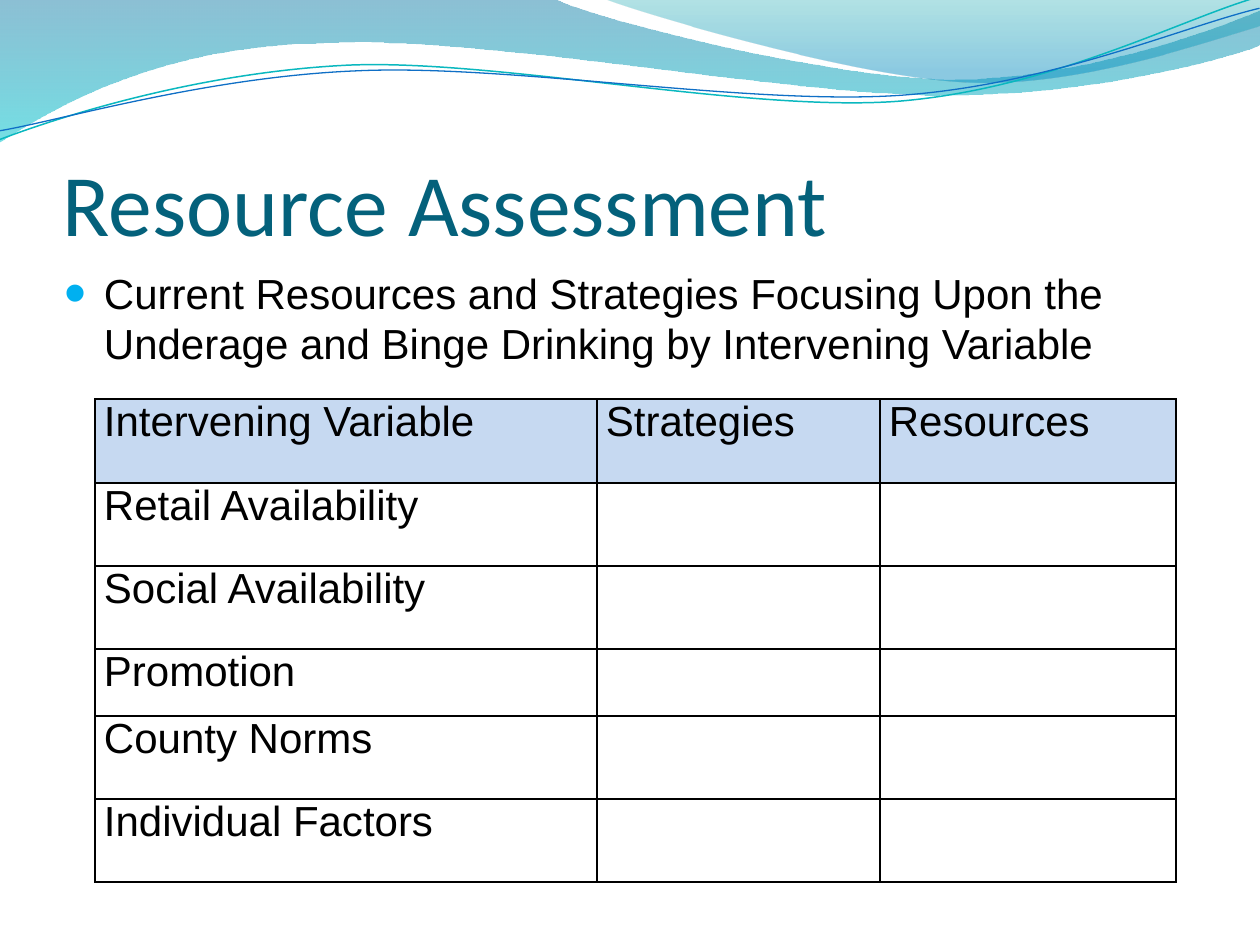
from dataclasses import dataclass

from lxml import etree
from pptx import Presentation
from pptx.dml.color import RGBColor
from pptx.enum.text import MSO_ANCHOR
from pptx.oxml.ns import qn
from pptx.util import Pt

SCALE = 914400 / 126
MIDDLE, BOTTOM = MSO_ANCHOR.MIDDLE, MSO_ANCHOR.BOTTOM

COLORS = {
    "title": "04617B", "text": "000000", "bullet": "00B0F0", "header": "C6D9F1",
    "border": "000000", "deep_blue": "0074A1", "cyan": "00C6CF", "teal": "00A1A9",
    "sky": "008BBF", "teal_line": "0AB8BF", "blue_line": "0F6FC6",
}

Point = tuple[int, int]


@dataclass
class Stop:
    position: float
    color: str
    opacity: int


@dataclass
class Wave:
    """Each segment holds one end point, or two controls and an end point."""
    start: Point
    segments: list[tuple[Point, ...]]
    stops: tuple[Stop, ...] = ()
    line: str = ""
    line_width: float = 0
    rotation: float = 0


@dataclass
class TextBlock:
    text: str
    box: tuple[int, int, int, int]
    insets: tuple[int, int, int, int]
    anchor: MSO_ANCHOR
    font: str
    size: int
    color: str


WAVES = [
    Wave((0, 0), [
        ((554, -1),),
        ((600, 21), (837, 79), (955, 79)),
        ((1075, 79), (1207, 33), (1260, 11)),
        ((1261, 45),),
        ((1239, 55), (1096, 96), (940, 95)),
        ((784, 95), (481, 35), (324, 43)),
        ((163, 45), (58, 105), (-1, 142)),
    ], stops=(Stop(0, "deep_blue", 45), Stop(1, "cyan", 55))),
    Wave((604, -1), [
        ((641, 14), (859, 78), (969, 82)),
        ((1079, 87), (1211, 40), (1260, 26)),
        ((1260, 0),),
    ], stops=(Stop(0, "teal", 30), Stop(0.8, "sky", 45))),
    Wave((-3, 110), [
        ((58, 90), (199, 52), (350, 52)),
        ((499, 53), (745, 118), (896, 114)),
        ((1049, 109), (1184, 45), (1260, 27)),
    ], line="teal_line", line_width=0.85, rotation=357.3),
    Wave((-2, 101), [
        ((57, 94), (207, 57), (357, 58)),
        ((509, 58), (750, 112), (902, 108)),
        ((1052, 104), (1187, 52), (1262, 38)),
    ], line="blue_line", line_width=0.75, rotation=357.3),
]

TITLE = TextBlock("Resource Assessment", (63, 97, 1134, 157), (0, 6, 0, 0),
                  BOTTOM, "Calibri", 50, "title")
SUBTITLE = TextBlock(
    "Current Resources and Strategies Focusing Upon the Underage and Binge Drinking "
    "by Intervening Variable",
    (53, 260, 1071, 115), (12, 6, 12, 6), MIDDLE, "Arial", 24, "text")
BULLET_INDENT = 39

HEADERS = ["Intervening Variable", "Strategies", "Resources"]
VARIABLES = ["Retail Availability", "Social Availability", "Promotion",
             "County Norms", "Individual Factors"]
TABLE_LEFT, TABLE_TOP = 95, 399
COLUMN_WIDTHS = [502, 283, 296]
ROW_HEIGHTS = [84, 83, 83, 67, 83, 83]


def px(value: int) -> int:
    return round(value * SCALE)


def rgb(name: str) -> RGBColor:
    return RGBColor.from_string(COLORS[name])


def bend_segments(shape, segments: list[tuple[Point, ...]]) -> None:
    """Join the line steps of each three-point segment into one cubic curve."""
    steps = iter(list(shape.element.iter(qn("a:lnTo"))))
    for segment in segments:
        segment_steps = [next(steps) for _ in segment]
        if len(segment) == 3:
            curve = etree.Element(qn("a:cubicBezTo"))
            segment_steps[0].addprevious(curve)
            for step in segment_steps:
                curve.append(step[0])
                step.getparent().remove(step)


def draw_wave(slide, wave: Wave) -> None:
    builder = slide.shapes.build_freeform(*wave.start, scale=SCALE)
    points = [point for segment in wave.segments for point in segment]
    builder.add_line_segments(points, close=bool(wave.stops))
    shape = builder.convert_to_shape()
    bend_segments(shape, wave.segments)
    shape.rotation = wave.rotation
    shape.shadow.inherit = False
    if not wave.stops:
        shape.fill.background()
        shape.line.color.rgb = rgb(wave.line)
        shape.line.width = Pt(wave.line_width)
        return
    shape.line.fill.background()
    shape.fill.gradient()
    shape.fill.gradient_angle = 270
    for target, stop in zip(shape.fill.gradient_stops, wave.stops):
        target.position = stop.position
        target.color.rgb = rgb(stop.color)
    colors = shape.element.spPr.find(qn("a:gradFill")).iter(qn("a:srgbClr"))
    for color, stop in zip(colors, wave.stops):
        etree.SubElement(color, qn("a:alpha"), val=str(stop.opacity * 1000))


def style_font(paragraph, name: str, size: int, color: str) -> None:
    paragraph.font.name = name
    paragraph.font.size = Pt(size)
    paragraph.font.color.rgb = rgb(color)


def draw_text(slide, block: TextBlock):
    frame = slide.shapes.add_textbox(*map(px, block.box)).text_frame
    frame.word_wrap = True
    frame.vertical_anchor = block.anchor
    (frame.margin_left, frame.margin_top,
     frame.margin_right, frame.margin_bottom) = map(px, block.insets)
    paragraph = frame.paragraphs[0]
    paragraph.text = block.text
    style_font(paragraph, block.font, block.size, block.color)
    return paragraph


def add_bullet(paragraph) -> None:
    properties = paragraph._p.get_or_add_pPr()
    properties.set("marL", str(px(BULLET_INDENT)))
    properties.set("indent", str(-px(BULLET_INDENT)))
    color = etree.Element(qn("a:buClr"))
    etree.SubElement(color, qn("a:srgbClr"), val=COLORS["bullet"])
    size = etree.Element(qn("a:buSzPct"), val="150000")
    font = etree.Element(qn("a:buFont"), typeface="Arial")
    character = etree.Element(qn("a:buChar"), char="•")
    for position, element in enumerate((color, size, font, character)):
        properties.insert(position, element)


def add_borders(cell) -> None:
    properties = cell._tc.get_or_add_tcPr()
    for position, side in enumerate(("lnL", "lnR", "lnT", "lnB")):
        line = etree.Element(qn(f"a:{side}"), w=str(Pt(1)))
        fill = etree.SubElement(line, qn("a:solidFill"))
        etree.SubElement(fill, qn("a:srgbClr"), val=COLORS["border"])
        properties.insert(position, line)


def draw_table(slide) -> None:
    rows = [HEADERS] + [[variable, "", ""] for variable in VARIABLES]
    table = slide.shapes.add_table(
        len(rows), len(HEADERS), px(TABLE_LEFT), px(TABLE_TOP),
        px(sum(COLUMN_WIDTHS)), px(sum(ROW_HEIGHTS))).table
    for column, width in zip(table.columns, COLUMN_WIDTHS):
        column.width = px(width)
    for row_index, (row, height, texts) in enumerate(zip(table.rows, ROW_HEIGHTS, rows)):
        row.height = px(height)
        for cell, text in zip(row.cells, texts):
            cell.margin_left = cell.margin_right = px(9)
            cell.margin_top = cell.margin_bottom = 0
            if text:
                cell.text = text
                style_font(cell.text_frame.paragraphs[0], "Arial", 24, "text")
            if row_index == 0:
                cell.fill.solid()
                cell.fill.fore_color.rgb = rgb("header")
            else:
                cell.fill.background()
            add_borders(cell)


def main() -> None:
    presentation = Presentation()
    presentation.slide_width, presentation.slide_height = px(1260), px(945)
    slide = presentation.slides.add_slide(presentation.slide_layouts[6])
    for wave in WAVES:
        draw_wave(slide, wave)
    draw_text(slide, TITLE)
    draw_table(slide)
    add_bullet(draw_text(slide, SUBTITLE))
    presentation.save("out.pptx")


if __name__ == "__main__":
    main()
